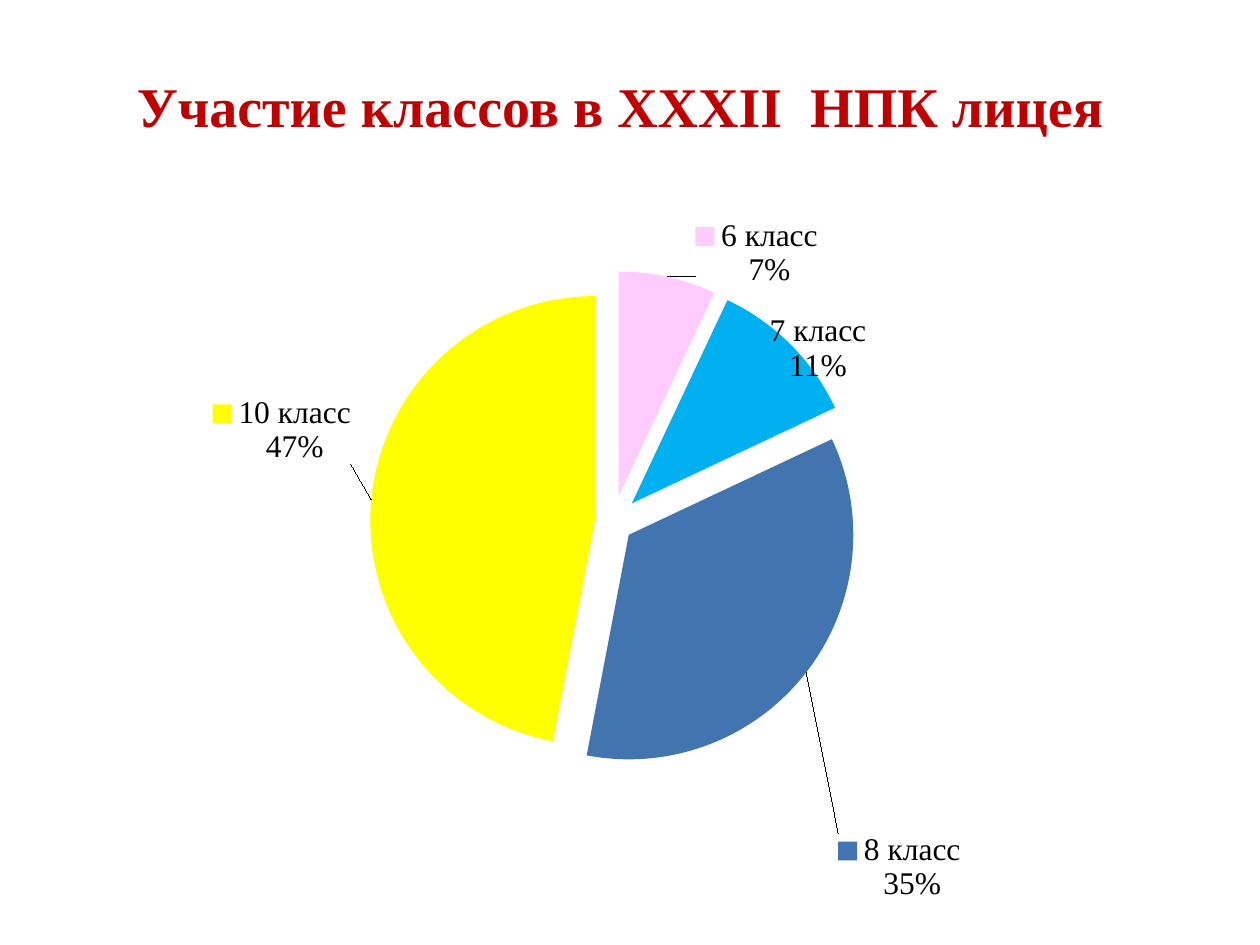
import pptx
import pptx.chart.data
import pptx.dml.color
import pptx.enum.chart
import pptx.enum.text
import pptx.oxml
import pptx.oxml.ns
import pptx.util

Cm = pptx.util.Cm
SERIF = "Times New Roman"
# Class, percent, colour, explosion, legend key shown, label shift (share of chart)
CLASSES = [
    ("6 класс", 7, "FFCCFF", 12, 1, (0.02, 0.02)),
    ("7 класс", 11, "00B0F0", 12, 0, (-0.02, 0.05)),
    ("8 класс", 35, "4274AF", 9, 1, (0.02, 0.18)),
    ("10 класс", 47, "FFFF00", 8, 1, (-0.01, -0.04)),
]
PLOT_AREA = {"x": 0.093, "y": 0.143, "w": 0.773, "h": 0.632}


def colour(hex_string):
    return pptx.dml.color.RGBColor.from_string(hex_string)


def apply_format(target, values):
    for name, value in values.items():
        setattr(target, name, value)


def chart_element(tag, content):
    namespace = pptx.oxml.ns.nsdecls("c")
    return pptx.oxml.parse_xml(f"<c:{tag} {namespace}>{content}</c:{tag}>")


def layout_content(values, modes=""):
    places = "".join(f'<c:{key} val="{value}"/>' for key, value in values.items())
    return f"<c:manualLayout>{modes}{places}</c:manualLayout>"


def add_title(slide, box, text):
    title = slide.shapes.title
    apply_format(title, dict(zip(("left", "top", "width", "height"), box)))
    frame = title.text_frame
    apply_format(frame, {
        "text": text, "word_wrap": True,
        "auto_size": pptx.enum.text.MSO_AUTO_SIZE.NONE,
        "vertical_anchor": pptx.enum.text.MSO_ANCHOR.TOP,
    })
    paragraph = frame.paragraphs[0]
    paragraph.alignment = pptx.enum.text.PP_ALIGN.CENTER
    font = paragraph.runs[0].font
    apply_format(font, {"name": SERIF, "size": pptx.util.Pt(32), "bold": True})
    font.color.rgb = colour("C00000")


def add_point_label(labels, index, legend_key, shift):
    layout = layout_content(dict(zip("xy", shift)))
    flags = {"LegendKey": legend_key, "Val": 0, "CatName": 1, "SerName": 0,
             "Percent": 1, "BubbleSize": 0}
    shows = "".join(f'<c:show{name} val="{flag}"/>' for name, flag in flags.items())
    labels.insert(index, chart_element("dLbl", (
        f'<c:idx val="{index}"/><c:layout>{layout}</c:layout>'
        '<c:numFmt formatCode="0%" sourceLinked="0"/>'
        f'<c:dLblPos val="outEnd"/>{shows}<c:separator>\n</c:separator>')))


def add_class_pie(slide, box):
    data = pptx.chart.data.CategoryChartData()
    data.categories = [row[0] for row in CLASSES]
    data.add_series("Series 1", [row[1] for row in CLASSES])
    frame = slide.shapes.add_chart(pptx.enum.chart.XL_CHART_TYPE.PIE, *box, data)
    chart = frame.chart
    apply_format(chart, {"has_title": False, "has_legend": False})
    apply_format(chart.font, {"name": "Calibri", "size": pptx.util.Pt(10)})
    chart.font.color.rgb = colour("000000")
    plot = chart.plots[0]
    plot.vary_by_categories = True
    series = plot.series[0]

    # Labels of the whole series
    labels = series.data_labels
    apply_format(labels, {
        "show_percentage": True, "show_category_name": True, "show_value": False,
        "number_format": "0%", "number_format_is_linked": False,
        "position": pptx.enum.chart.XL_LABEL_POSITION.OUTSIDE_END,
    })
    apply_format(labels.font, {"name": SERIF, "size": pptx.util.Pt(18)})
    labels.font.color.rgb = colour("000000")
    label_list = series._element.find(pptx.oxml.ns.qn("c:dLbls"))
    text_format = label_list.find(pptx.oxml.ns.qn("c:txPr"))

    # Slices and their shifted labels
    for index, (_, _, fill, explosion, legend_key, shift) in enumerate(CLASSES):
        point_format = series.points[index].format
        point_format.fill.solid()
        point_format.fill.fore_color.rgb = colour(fill)
        point_format.line.fill.background()
        add_point_label(label_list, index, legend_key, shift)
        label = label_list[index]
        label.insert(3, pptx.oxml.parse_xml(pptx.oxml.xmlchemy.serialize_for_reading(text_format)))
        slice_element = series._element.findall(pptx.oxml.ns.qn("c:dPt"))[index]
        shape_format = slice_element.find(pptx.oxml.ns.qn("c:spPr"))
        shape_format.addprevious(pptx.oxml.parse_xml(
            f'<c:explosion {pptx.oxml.ns.nsdecls("c")} val="{explosion}"/>'))

    # Explosion of the series and place of the plot
    first_slice = series._element.find(pptx.oxml.ns.qn("c:dPt"))
    first_slice.addprevious(pptx.oxml.parse_xml(
        f'<c:explosion {pptx.oxml.ns.nsdecls("c")} val="22"/>'))
    plot_area = chart._chartSpace.chart.plotArea
    for old_layout in plot_area.findall(pptx.oxml.ns.qn("c:layout")):
        plot_area.remove(old_layout)
    modes = ('<c:layoutTarget val="inner"/><c:xMode val="edge"/>'
             '<c:yMode val="edge"/>')
    plot_area.insert(0, chart_element("layout", layout_content(PLOT_AREA, modes)))
    return frame


def main():
    presentation = pptx.Presentation()
    apply_format(presentation, {"slide_width": Cm(25.4), "slide_height": Cm(19.05)})
    slide = presentation.slides.add_slide(presentation.slide_layouts[5])
    add_title(slide, (Cm(2.31), Cm(1.32), Cm(20.4), Cm(1.63)),
              "Участие классов в XXXII  НПК лицея")
    frame = add_class_pie(slide, (Cm(-0.3), Cm(2.51), Cm(26.39), Cm(17.48)))
    # The chart lies behind the title
    slide.shapes.title._element.addprevious(frame._element)
    presentation.save("out.pptx")


if __name__ == "__main__":
    main()
